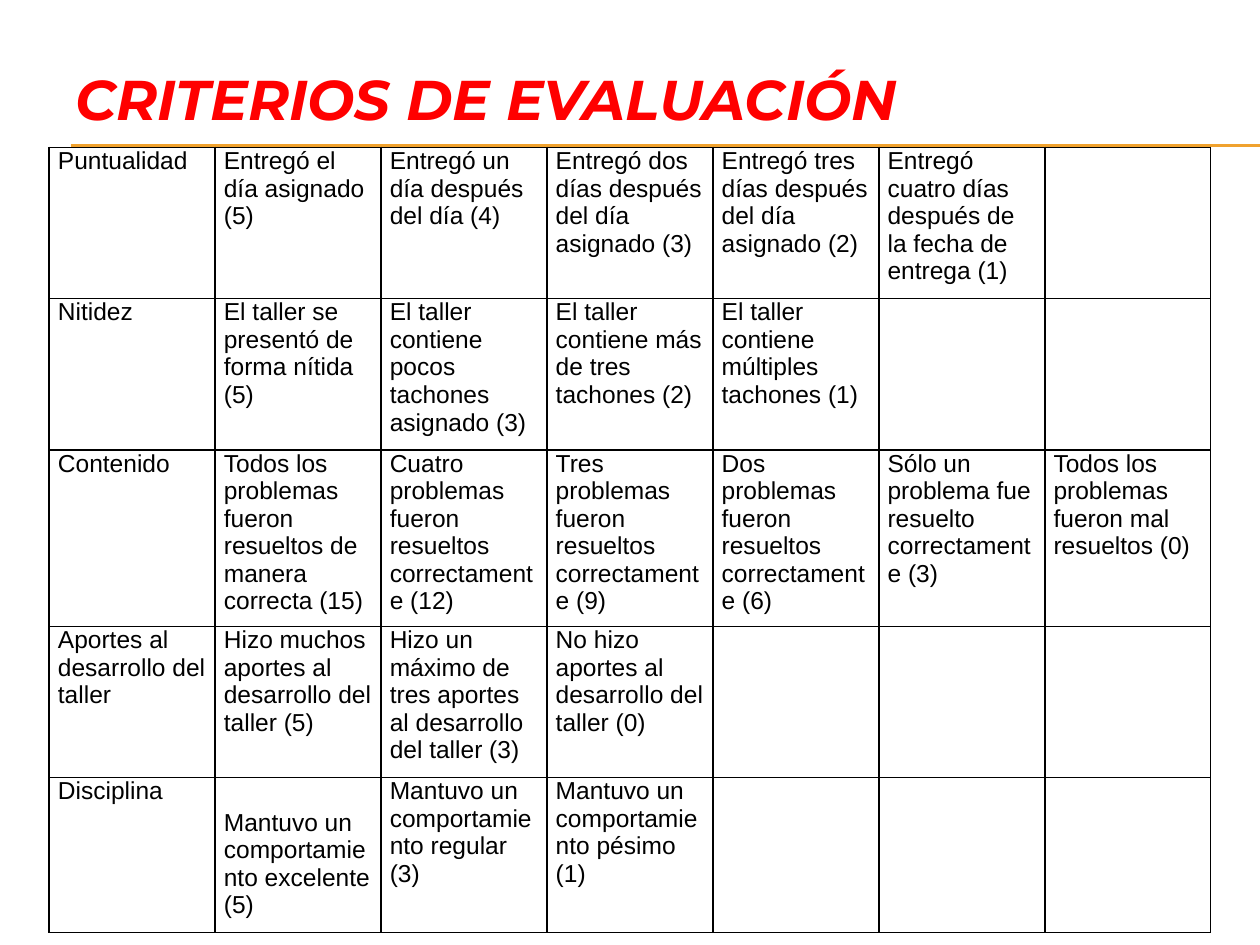
from dataclasses import dataclass

from lxml import etree
from pptx import Presentation
from pptx.dml.color import RGBColor
from pptx.enum import shapes, text
from pptx.oxml.ns import qn
from pptx.util import Inches, Pt

RED = RGBColor(0xFF, 0x00, 0x00)
GOLD = RGBColor(0xF0, 0xA2, 0x2E)
BLACK = RGBColor(0x00, 0x00, 0x00)
COLS = 7
WIDTH = 9.22


@dataclass
class Row:
    name: str
    high: float
    marks: list[str]


ROWS = [
    Row("Puntualidad", 1.2, [
        "Entregó el día asignado (5)",
        "Entregó un día después del día (4)",
        "Entregó dos días después del día asignado (3)",
        "Entregó tres días después del día asignado (2)",
        "Entregó cuatro días después de la fecha de entrega (1)",
    ]),
    Row("Nitidez", 1.2, [
        "El taller se presentó de forma nítida (5)",
        "El taller contiene pocos tachones asignado (3)",
        "El taller contiene más de tres tachones (2)",
        "El taller contiene múltiples tachones (1)",
    ]),
    Row("Contenido", 1.4, [
        "Todos los problemas fueron resueltos de manera correcta (15)",
        "Cuatro problemas fueron resueltos correctamente (12)",
        "Tres problemas fueron resueltos correctamente (9)",
        "Dos problemas fueron resueltos correctamente (6)",
        "Sólo un problema fue resuelto correctamente (3)",
        "Todos los problemas fueron mal resueltos (0)",
    ]),
    Row("Aportes al desarrollo del taller", 1.2, [
        "Hizo muchos aportes al desarrollo del taller (5)",
        "Hizo un máximo de tres aportes al desarrollo del taller (3)",
        "No hizo aportes al desarrollo del taller (0)",
    ]),
    Row("Disciplina", 1.23, [
        "Mantuvo un comportamiento excelente (5)",
        "Mantuvo un comportamiento regular (3)",
        "Mantuvo un comportamiento pésimo (1)",
    ]),
]


def draw_rule(slide, top: float) -> None:
    rule = slide.shapes.add_connector(
        shapes.MSO_CONNECTOR.STRAIGHT,
        Inches(0.56), Inches(top), Inches(10), Inches(top))
    rule.line.color.rgb = GOLD
    rule.line.width = Pt(0.75)
    etree.SubElement(rule._element.spPr, qn("a:effectLst"))


def draw_title(slide, words: str) -> None:
    box = slide.shapes.add_textbox(Inches(0.5), Inches(0.3), Inches(9), Inches(0.95))
    frame = box.text_frame
    frame.word_wrap = True
    frame.vertical_anchor = text.MSO_ANCHOR.MIDDLE
    para = frame.paragraphs[0]
    para.text = words
    font = para.font
    font.name, font.size = "Montserrat", Pt(32)
    font.bold = font.italic = True
    font.color.rgb = RED


def add_edges(cell) -> None:
    props = cell._tc.get_or_add_tcPr()
    for spot, side in enumerate(("lnL", "lnR", "lnT", "lnB")):
        edge = etree.Element(qn(f"a:{side}"), w=str(Pt(1)))
        fill = etree.SubElement(edge, qn("a:solidFill"))
        etree.SubElement(fill, qn("a:srgbClr"), val=str(BLACK))
        props.insert(spot, edge)


def fill_cell(cell, words: str) -> None:
    cell.fill.background()
    add_edges(cell)
    cell.margin_left = cell.margin_right = Inches(0.07)
    cell.margin_top = cell.margin_bottom = 0
    para = cell.text_frame.paragraphs[0]
    para.text = words
    para.space_before = para.space_after = Pt(1)
    font = para.font
    font.name, font.size = "Arial", Pt(14)
    font.color.rgb = BLACK


def draw_table(slide, rows: list[Row]):
    high = sum(row.high for row in rows)
    table = slide.shapes.add_table(
        len(rows), COLS, Inches(0.39), Inches(1.17), Inches(WIDTH), Inches(high)).table
    table.first_row = table.horz_banding = False
    for col in table.columns:
        col.width = Inches(WIDTH / COLS)
    for i, row in enumerate(rows):
        table.rows[i].height = Inches(row.high)
        words = [row.name, *row.marks]
        words += [""] * (COLS - len(words))
        for j, item in enumerate(words):
            fill_cell(table.cell(i, j), item)
    return table


def main() -> None:
    deck = Presentation()
    deck.slide_width, deck.slide_height = Inches(10), Inches(7.5)
    slide = deck.slides.add_slide(deck.slide_layouts[6])
    for top in (1.15, 1.16):
        draw_rule(slide, top)
    draw_title(slide, "CRITERIOS DE EVALUACIÓN")
    table = draw_table(slide, ROWS)
    table.cell(4, 1).margin_top = Inches(0.25)
    deck.save("out.pptx")


if __name__ == "__main__":
    main()
